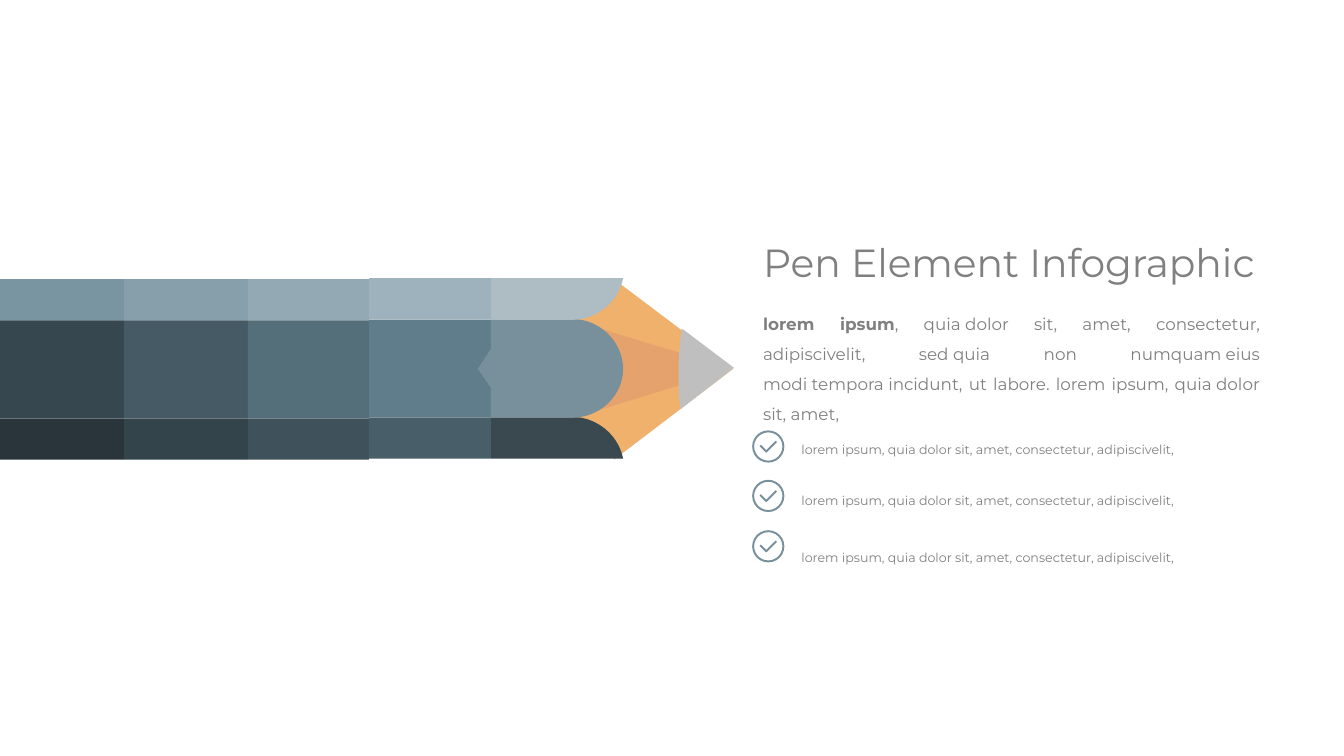
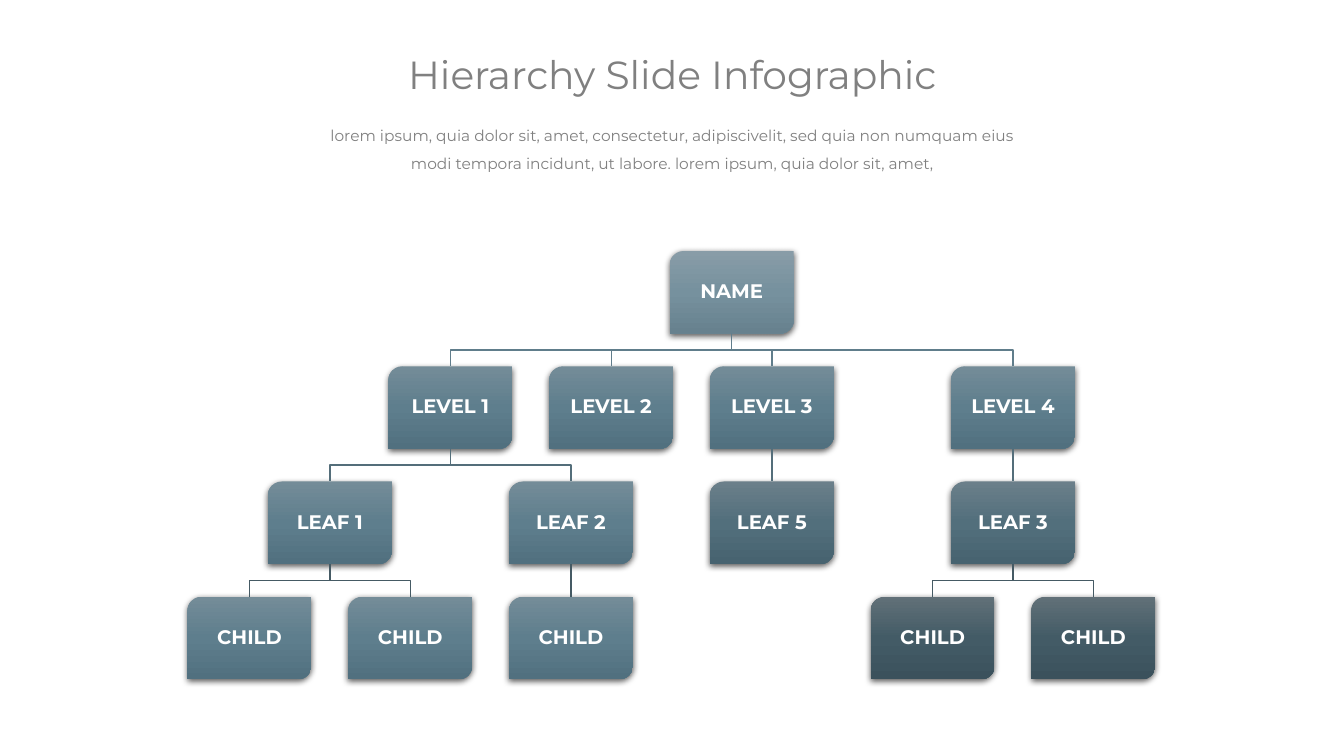
from copy import deepcopy
from dataclasses import dataclass

from lxml import etree
from pptx import Presentation
from pptx.dml.color import RGBColor
from pptx.enum import shapes, text
from pptx.oxml.ns import qn
from pptx.util import Inches, Pt


@dataclass(frozen=True)
class Theme:
    font: str = "Montserrat"
    gray: str = "808080"
    white: str = "FFFFFF"
    accent: str = "78909C"
    wood: str = "F0B16C"
    core: str = "E5A26D"
    lead: str = "BFBFBF"
    # Pencil colours per section: top, middle, bottom band
    body: tuple = (("7A95A2", "37474F", "29353B"), ("869FAB", "455A64", "34444B"),
                   ("93AAB5", "546E7A", "3F525C"), ("9DB2BC", "607D8B", "485E68"))
    tip: tuple = ("AEBCC4", "78909C", "3A4950")
    # Node gradients and the line colour under each tree level
    light: tuple = ("889CA7", "76919E", "67818E")
    blue: tuple = ("748C98", "5E7E8D", "51707F")
    teal: tuple = ("6B7F8A", "526F7C", "476370")
    dark: tuple = ("617078", "435B66", "3B515C")
    branches: tuple = ("607D8B", "546E7A", "455A64")
    title_size: int = 28
    node_size: int = 14
    lead_size: int = 12
    body_size: int = 11
    item_size: int = 9
    check_width: float = 1.38
    branch_width: float = 1


def tied(words):
    """Turn each tilde into a no-break space."""
    return words.replace("~", chr(160))


T = Theme()
ITEM = tied("lorem ipsum, quia~dolor sit, amet, consectetur, adipiscivelit,")
LEAD = "lorem ipsum"
REST = tied(", quia~dolor sit, amet, consectetur, adipiscivelit, sed~quia non numquam~eius "
            "modi~tempora~incidunt, ut labore. lorem ipsum, quia~dolor sit, amet,")


# Shared helpers
def rgb(color):
    return RGBColor.from_string(color)


def add_run(p, words, size, color=T.gray, bold=False):
    r = p.add_run()
    r.text = words
    r.font.name, r.font.size, r.font.bold = T.font, Pt(size), bold
    r.font.color.rgb = rgb(color)


def add_text(slide, box, runs, size, align=text.PP_ALIGN.LEFT, spacing=1.0):
    """Runs are (words, bold) pairs of one paragraph."""
    tf = slide.shapes.add_textbox(*map(Inches, box)).text_frame
    tf.word_wrap = True
    p = tf.paragraphs[0]
    p.alignment, p.line_spacing = align, spacing
    for words, bold in runs:
        add_run(p, words, size, bold=bold)


def add_title(slide, box, words):
    add_text(slide, box, [(words, False)], T.title_size)


def paint(sp, fill=None, line=None, width=1):
    sp.shadow.inherit = False
    if fill:
        sp.fill.solid()
        sp.fill.fore_color.rgb = rgb(fill)
    else:
        sp.fill.background()
    if line:
        sp.line.color.rgb = rgb(line)
        sp.line.width = Pt(width)
    else:
        sp.line.fill.background()


def bezier(start, curve, steps=16):
    x0, y0 = start
    x1, y1, x2, y2, x3, y3 = curve
    for i in range(1, steps + 1):
        t = i / steps
        a, b, c, d = (1 - t) ** 3, 3 * t * (1 - t) ** 2, 3 * t * t * (1 - t), t ** 3
        yield a * x0 + b * x1 + c * x2 + d * x3, a * y0 + b * y1 + c * y2 + d * y3


def add_outline(slide, left, top, steps, closed=True):
    """Steps are points (x, y) or curves (x1, y1, x2, y2, x, y)."""
    points = [steps[0]]
    for step in steps[1:]:
        points.extend([step] if len(step) == 2 else bezier(points[-1], step))
    points = [(Inches(left + x), Inches(top + y)) for x, y in points]
    builder = slide.shapes.build_freeform(*points[0])
    builder.add_line_segments(points[1:], close=closed)
    return builder.convert_to_shape()


# Pencil slide
def add_pencil(slide, left, top):
    bands = (0, 0.41, 1.38, 1.79)
    upper, lower, bottom = bands[1:]
    edges = (0, 1.23, 2.46, 3.66, 4.87)
    rises = (0, 0, 0, 0.01)

    # Barrel sections
    for x, right, rise, colors in zip(edges, edges[1:], rises, T.body):
        for y, end, color in zip(bands, bands[1:], colors):
            sp = slide.shapes.add_shape(
                shapes.MSO_SHAPE.RECTANGLE, Inches(left + x), Inches(top + y - rise),
                Inches(right - x), Inches(end - y))
            paint(sp, color)

    # Wood, core and lead
    x, mid = edges[-1], 0.89
    point = (
        (T.wood, [(6.09, bottom), (6.05, 1.57, 5.88, 1.41, 5.65, lower),
                  (5.9, 1.35, 6.1, 1.14, 6.1, mid), (6.1, 0.64, 5.9, 0.44, 5.65, upper),
                  (5.87, 0.38, 6.05, 0.21, 6.09, 0), (7.27, mid)]),
        (T.core, [(7.27, mid), (5.74, 1.36), (5.75, 0.43)]),
        (T.lead, [(6.76, 0.49), (6.76, 0.52), (6.74, 0.65, 6.73, 0.79, 6.73, 0.93),
                  (6.73, 1.03, 6.73, 1.12, 6.74, 1.21), (6.75, 1.29), (7.28, 0.88),
                  (6.79, 0.51)]),
    )
    # Rounded end of the barrel
    barrel_end = (
        (T.tip[0], [(x, 0), (6.18, 0), (6.14, 0.21, 5.96, 0.38, 5.74, upper), (x, upper)]),
        (T.tip[2], [(x, bottom), (x, lower), (5.74, lower),
                    (5.96, 1.41, 6.14, 1.58, 6.18, bottom)]),
        (T.tip[1], [(4.74, 0.9), (x, 0.7), (x, upper), (5.74, upper),
                    (5.98, 0.44, 6.18, 0.65, 6.18, 0.9),
                    (6.18, 1.15, 5.98, 1.35, 5.74, lower), (x, lower), (x, 1.09)]),
    )
    for rise, outlines in ((0, point), (rises[-1], barrel_end)):
        for color, steps in outlines:
            paint(add_outline(slide, left, top - rise, steps), color)


def add_check(slide, left, top):
    size = Inches(0.3)
    ring = slide.shapes.add_shape(
        shapes.MSO_SHAPE.OVAL, Inches(left), Inches(top), size, size)
    paint(ring, T.white, T.accent, T.check_width)
    tick = add_outline(slide, left, top, [(0.07, 0.14), (0.13, 0.2), (0.23, 0.1)], False)
    paint(tick, None, T.accent, T.check_width)


def add_checklist(slide, left, top):
    for check_y, text_y in ((0, -0.02), (0.49, 0.49), (0.99, 1.05)):
        add_check(slide, left, top + check_y)
        add_text(slide, (left + 0.38, top + text_y, 4.19, 0.3), [(ITEM, False)],
                 T.item_size, text.PP_ALIGN.JUSTIFY, 1.5)


def pencil_slide(slide):
    left = 7.47
    add_pencil(slide, 0, 2.77)
    add_title(slide, (left, 2.32, 5.25, 0.57), "Pen Element Infographic")
    add_text(slide, (left, 2.96, 5.13, 1.3), [(LEAD, True), (REST, False)],
             T.lead_size, text.PP_ALIGN.JUSTIFY, 1.5)
    add_checklist(slide, left, 4.28)


# Hierarchy slide
@dataclass
class Node:
    label: str
    colors: tuple
    children: tuple = ()
    slot: float = 0

    def column(self):
        """A parent stands midway between its outer children."""
        if not self.children:
            return self.slot
        return (self.children[0].column() + self.children[-1].column()) / 2


def child(colors, slot):
    return Node("CHILD", colors, slot=slot)


TREE = Node("NAME", T.light, (
    Node("LEVEL 1", T.blue, (
        Node("LEAF 1", T.blue, (child(T.blue, 0), child(T.blue, 4))),
        Node("LEAF 2", T.blue, (child(T.blue, 8),)))),
    Node("LEVEL 2", T.blue, slot=9),
    Node("LEVEL 3", T.blue, (Node("LEAF 5", T.teal, slot=13),)),
    Node("LEVEL 4", T.blue, (
        Node("LEAF 3", T.teal, (child(T.dark, 17), child(T.dark, 21))),)),
))


def add_shadow(sp):
    sp.shadow.inherit = False
    effects = sp.element.spPr.find(qn("a:effectLst"))
    outer = etree.SubElement(effects, qn("a:outerShdw"), blurRad=str(Pt(4.5)),
                             dist=str(Pt(1.5)), dir="5400000", rotWithShape="0")
    black = etree.SubElement(outer, qn("a:srgbClr"), val="000000")
    etree.SubElement(black, qn("a:alpha"), val="63000")


def add_node(slide, box, node):
    sp = slide.shapes.add_shape(shapes.MSO_SHAPE.ROUND_2_DIAG_RECTANGLE, *map(Inches, box))
    sp.line.fill.background()
    # Three-stop vertical gradient
    sp.fill.gradient()
    sp.fill.gradient_angle = 270
    stops = sp.element.spPr.find(".//" + qn("a:gsLst"))
    stops.append(deepcopy(stops[0]))
    for stop, position, color in zip(sp.fill.gradient_stops, (0, 0.5, 1), node.colors):
        stop.position = position
        stop.color.rgb = rgb(color)
    add_shadow(sp)
    # Label
    tf = sp.text_frame
    tf.word_wrap = True
    tf.vertical_anchor = text.MSO_ANCHOR.MIDDLE
    tf.margin_left = tf.margin_right = tf.margin_top = tf.margin_bottom = Inches(0.1)
    p = tf.paragraphs[0]
    p.alignment, p.line_spacing = text.PP_ALIGN.CENTER, 0.9
    add_run(p, node.label, T.node_size, T.white, True)
    return sp


def link(slide, parent, below, color):
    """Join a parent to one child: straight if aligned, else with two bends."""
    x, y = parent.left + parent.width // 2, parent.top + parent.height
    end_x, end_y = below.left + below.width // 2, below.top
    if abs(x - end_x) < Inches(0.01):
        cn = slide.shapes.add_connector(shapes.MSO_CONNECTOR.STRAIGHT, x, y, end_x, end_y)
        cn.line.color.rgb = rgb(color)
        cn.line.width = Pt(T.branch_width)
        etree.SubElement(cn.element.spPr, qn("a:effectLst"))
        cn.begin_connect(parent, 2)
        cn.end_connect(below, 0)
        return
    bar = (y + end_y) // 2
    builder = slide.shapes.build_freeform(x, y)
    builder.add_line_segments([(x, bar), (end_x, bar), (end_x, end_y)], close=False)
    paint(builder.convert_to_shape(), None, color, T.branch_width)


def add_tree(slide, box, root):
    left, top, width, height = box
    node_w, node_h = 1.23, 0.82
    step_x, step_y = (width - node_w) / 21, (height - node_h) / 3

    def place(node, level):
        spot = (left + node.column() * step_x, top + level * step_y, node_w, node_h)
        sp = add_node(slide, spot, node)
        for item in node.children:
            link(slide, sp, place(item, level + 1), T.branches[level])
        return sp

    place(root, 0)


def hierarchy_slide(slide):
    add_title(slide, (3.95, 0.45, 5.6, 0.57), "Hierarchy Slide Infographic")
    add_text(slide, (2.34, 1.11, 8.66, 0.63), [(LEAD + REST, False)],
             T.body_size, text.PP_ALIGN.CENTER, 1.5)
    add_tree(slide, (1.86, 2.49, 9.6, 4.25), TREE)


def main():
    prs = Presentation()
    prs.slide_width, prs.slide_height = Inches(13.33), Inches(7.5)
    for build in (pencil_slide, hierarchy_slide):
        build(prs.slides.add_slide(prs.slide_layouts[6]))
    prs.save("out.pptx")


if __name__ == "__main__":
    main()
